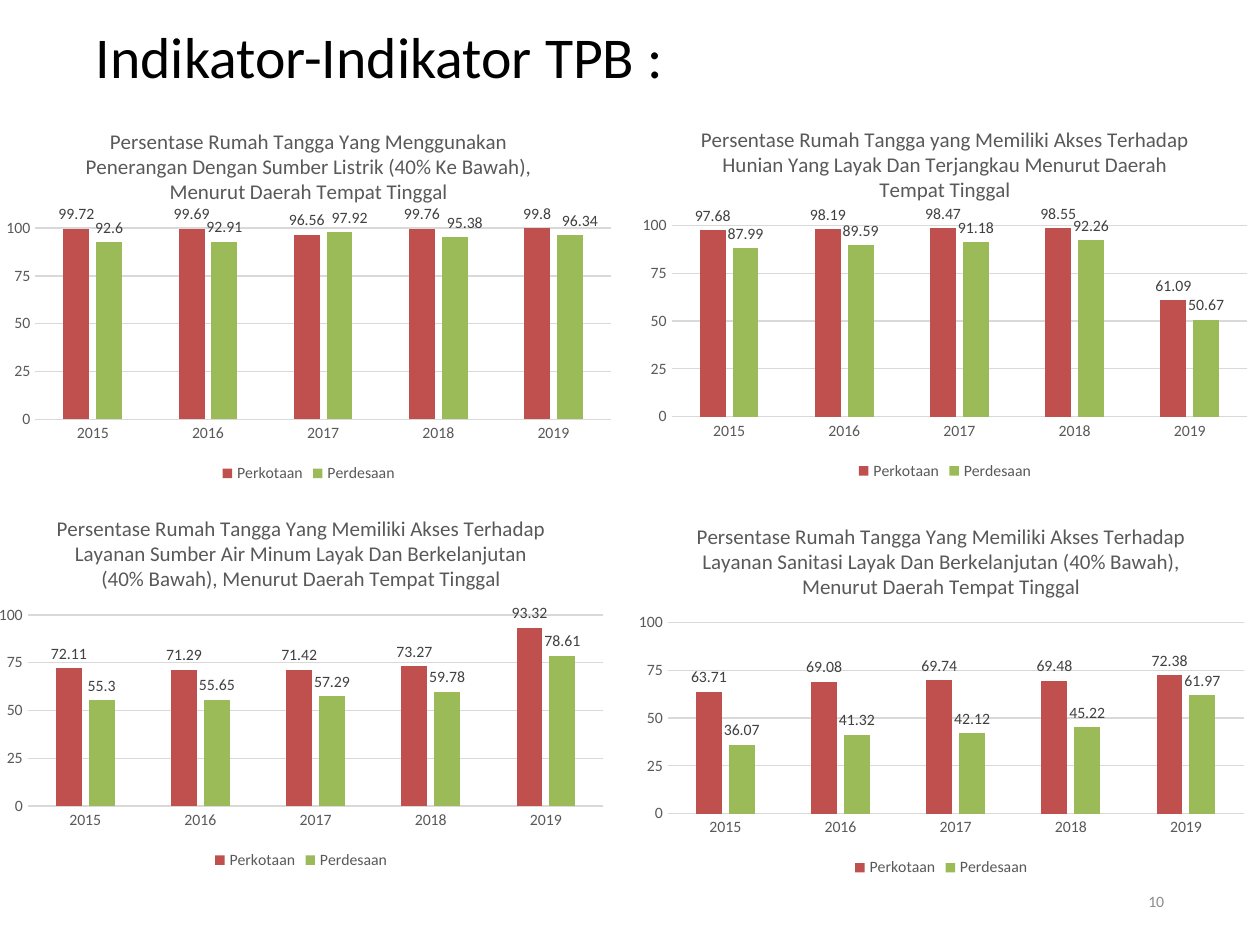
from lxml import etree
from pptx import Presentation
from pptx.chart.data import CategoryChartData
from pptx.dml.color import RGBColor
from pptx.enum.chart import XL_CHART_TYPE, XL_LABEL_POSITION, XL_LEGEND_POSITION, XL_TICK_MARK
from pptx.enum.text import MSO_ANCHOR, PP_ALIGN
from pptx.oxml import parse_xml
from pptx.oxml.ns import nsdecls, qn
from pptx.util import Inches, Pt

CLUSTERED = XL_CHART_TYPE.COLUMN_CLUSTERED
OUTSIDE = XL_LABEL_POSITION.OUTSIDE_END
BOTTOM = XL_LEGEND_POSITION.BOTTOM
NO_TICK = XL_TICK_MARK.NONE
MIDDLE = MSO_ANCHOR.MIDDLE
LEFT, RIGHT = PP_ALIGN.LEFT, PP_ALIGN.RIGHT

BLACK = RGBColor(0x00, 0x00, 0x00)
PAGE_GRAY = RGBColor(0x8C, 0x8C, 0x8C)
TEXT_GRAY = RGBColor(0x59, 0x59, 0x59)
LABEL_GRAY = RGBColor(0x40, 0x40, 0x40)
GRID_GRAY = RGBColor(0xD9, 0xD9, 0xD9)
RED = RGBColor(0xC0, 0x50, 0x4D)
GREEN = RGBColor(0x9B, 0xBB, 0x59)

FONT = "Calibri"
YEARS = ["2015", "2016", "2017", "2018", "2019"]
AREAS = [("Perkotaan", RED), ("Perdesaan", GREEN)]
LABEL_SHIFT = 0.016

ELECTRICITY = (
    "Persentase Rumah Tangga Yang Menggunakan Penerangan Dengan Sumber Listrik "
    "(40% Ke Bawah), Menurut Daerah Tempat Tinggal",
    [99.72, 99.69, 96.56, 99.76, 99.8],
    [92.6, 92.91, 97.92, 95.38, 96.34],
)
WATER = (
    "Persentase Rumah Tangga Yang Memiliki Akses Terhadap Layanan Sumber Air Minum "
    "Layak Dan Berkelanjutan (40% Bawah), Menurut Daerah Tempat Tinggal",
    [72.11, 71.29, 71.42, 73.27, 93.32],
    [55.3, 55.65, 57.29, 59.78, 78.61],
)
HOUSING = (
    "Persentase Rumah Tangga yang Memiliki Akses Terhadap Hunian Yang Layak Dan "
    "Terjangkau Menurut Daerah Tempat Tinggal",
    [97.68, 98.19, 98.47, 98.55, 61.09],
    [87.99, 89.59, 91.18, 92.26, 50.67],
)
SANITATION = (
    "Persentase Rumah Tangga Yang Memiliki Akses Terhadap Layanan Sanitasi Layak Dan "
    "Berkelanjutan (40% Bawah), Menurut Daerah Tempat Tinggal",
    [63.71, 69.08, 69.74, 69.48, 72.38],
    [36.07, 41.32, 42.12, 45.22, 61.97],
)


def style_font(font, size, color):
    """Set the typeface, size and colour of a font."""
    font.name = FONT
    font.size = Pt(size)
    font.bold = False
    font.color.rgb = color


def add_text(page, left, top, width, height, text, size, color, align=LEFT, spacing=1.0):
    """Add a vertically centred single-line text box."""
    box = page.shapes.add_textbox(Inches(left), Inches(top), Inches(width), Inches(height))
    frame = box.text_frame
    frame.word_wrap = True
    frame.vertical_anchor = MIDDLE
    frame.margin_left = frame.margin_right = Inches(0.07)
    frame.margin_top = frame.margin_bottom = Inches(0.04)
    para = frame.paragraphs[0]
    para.alignment = align
    para.line_spacing = spacing
    span = para.add_run()
    span.text = text
    style_font(span.font, size, color)


def style_axes(chart):
    """Format the year axis and the percentage axis with its gridlines."""
    years, percent = chart.category_axis, chart.value_axis
    for axis in (years, percent):
        axis.major_tick_mark = axis.minor_tick_mark = NO_TICK
        style_font(axis.tick_labels.font, 9, TEXT_GRAY)
    percent.minimum_scale, percent.maximum_scale, percent.major_unit = 0, 100, 25
    percent.has_major_gridlines = True
    percent.format.line.fill.background()
    for line in (years.format.line, percent.major_gridlines.format.line):
        line.color.rgb = GRID_GRAY
        line.width = Pt(0.75)


def style_series(series, color):
    """Colour one series and show its values above the columns."""
    series.format.fill.solid()
    series.format.fill.fore_color.rgb = color
    series.invert_if_negative = False
    labels = series.data_labels
    labels.show_value = True
    labels.position = OUTSIDE
    style_font(labels.font, 9, LABEL_GRAY)


def shift_labels(series, indexes):
    """Move the value labels of some points slightly to the right."""
    for index in indexes:
        label = series.points[index].data_label
        style_font(label.font, 9, LABEL_GRAY)
        label.position = OUTSIDE
    for element in series.data_labels._element.findall(qn("c:dLbl")):
        layout = parse_xml(f"<c:layout {nsdecls('c')}/>")
        manual = etree.SubElement(layout, qn("c:manualLayout"))
        etree.SubElement(manual, qn("c:x")).set("val", str(LABEL_SHIFT))
        etree.SubElement(manual, qn("c:y")).set("val", "0")
        element.find(qn("c:idx")).addnext(layout)


def add_indicator_chart(page, left, top, indicator):
    """Add a column chart comparing urban and rural households."""
    title, *values = indicator
    data = CategoryChartData()
    data.categories = YEARS
    for (name, _), numbers in zip(AREAS, values):
        data.add_series(name, numbers)
    frame = page.shapes.add_chart(
        CLUSTERED, Inches(left), Inches(top), Inches(5), Inches(3), data
    )
    chart = frame.chart
    style_font(chart.font, 10, BLACK)
    chart.has_title = True
    chart.chart_title.include_in_layout = False
    span = chart.chart_title.text_frame.paragraphs[0].add_run()
    span.text = title
    style_font(span.font, 12, TEXT_GRAY)
    chart.has_legend = True
    chart.legend.position = BOTTOM
    chart.legend.include_in_layout = False
    style_font(chart.legend.font, 9, TEXT_GRAY)
    style_axes(chart)
    plot = chart.plots[0]
    plot.vary_by_categories = False
    plot.gap_width = 219
    plot.overlap = -27
    for series, (_, color) in zip(plot.series, AREAS):
        style_series(series, color)
    return chart


def main():
    """Build the indicator slide and save it."""
    deck = Presentation()
    deck.slide_width, deck.slide_height = Inches(10), Inches(7.5)
    page = deck.slides.add_slide(deck.slide_layouts[6])
    add_text(page, 7.06, 6.95, 2.25, 0.4, "10", 9, PAGE_GRAY, align=RIGHT)
    electricity = add_indicator_chart(page, -0.05, 0.87, ELECTRICITY)
    shift_labels(electricity.plots[0].series[1], [2, 3, 4])
    add_indicator_chart(page, -0.11, 3.94, WATER)
    add_indicator_chart(page, 5, 0.85, HOUSING)
    add_indicator_chart(page, 4.97, 4, SANITATION)
    add_text(page, 0.69, 0.15, 8.62, 0.65, "Indikator-Indikator TPB :", 33, BLACK, spacing=0.9)
    deck.save("out.pptx")


if __name__ == "__main__":
    main()
